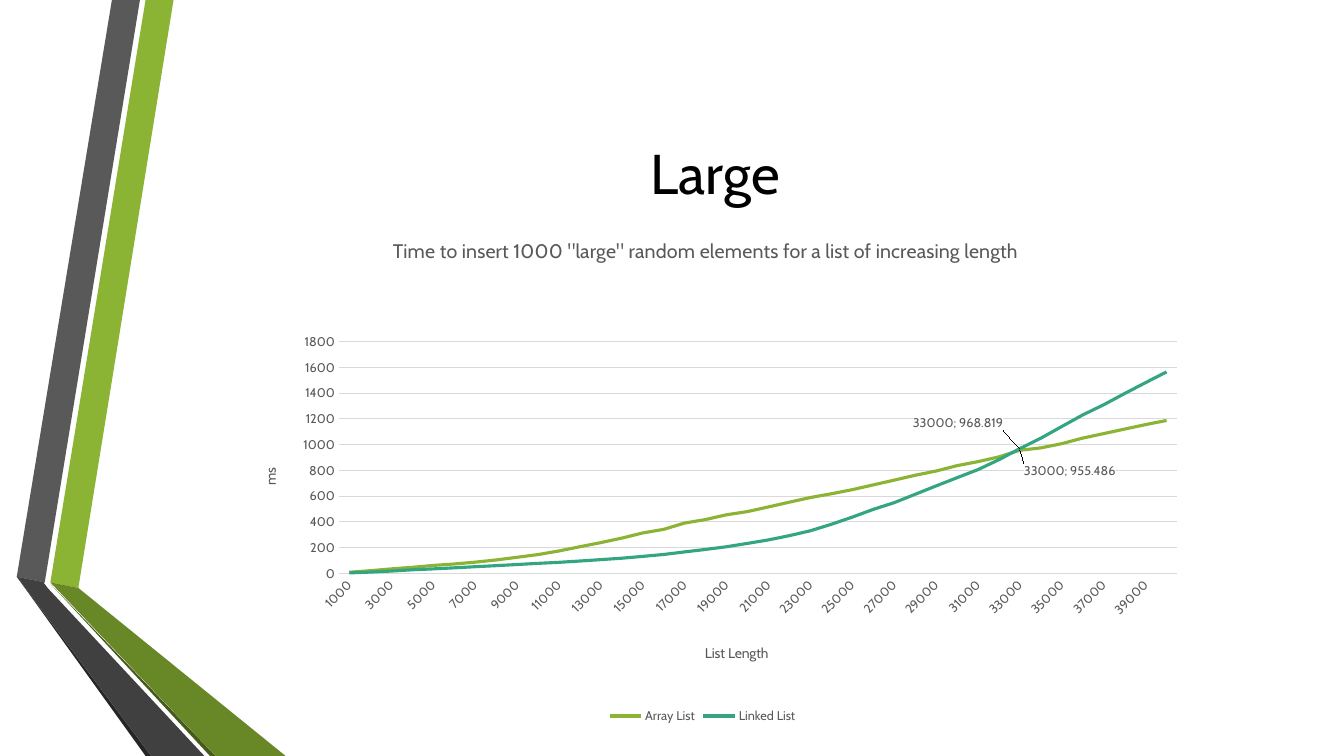
from dataclasses import dataclass

from pptx import Presentation
from pptx.chart.data import CategoryChartData
from pptx.dml.color import RGBColor
from pptx.enum.chart import XL_CHART_TYPE, XL_LEGEND_POSITION, XL_TICK_MARK
from pptx.enum.text import MSO_ANCHOR, PP_ALIGN
from pptx.oxml import parse_xml
from pptx.oxml.ns import nsdecls
from pptx.util import Pt


@dataclass(frozen=True)
class Theme:
    font: str = "Cabin"
    black: str = "000000"
    white: str = "FFFFFF"
    muted: str = "595959"
    grid: str = "D9D9D9"
    green: str = "8BB434"
    green_shade: str = "688727"
    green_edge: str = "465A1A"
    grey_shade: str = "404040"
    grey_edge: str = "262626"
    teal: str = "33A583"
    title_size: int = 40
    subtitle_size: int = 14
    axis_title_size: int = 10
    label_size: int = 9


THEME = Theme()
SLIDE_BOX = (0, 0, 960, 540)
TITLE_BOX = (116.5, 54, 789, 138)
CHART_BOX = (141, 152, 721.5, 368)

# Outlines of the folded ribbons, back to front
RIBBONS = [
    (THEME.green, [(36, 416), (55.5, 420), (124.5, 0), (104.5, 0)]),
    (THEME.muted, [(100, 0), (80, 0), (11.5, 412.5), (31.5, 415.5)]),
    (THEME.grey_edge, [(11.5, 412.5), (104.5, 540), (108.5, 540)]),
    (THEME.green_edge, [(36, 417), (150, 540), (154, 540)]),
    (THEME.green_shade, [(36, 416.5), (154, 540), (204, 540), (55.5, 420)]),
    (THEME.grey_shade, [(145.5, 540), (34.5, 420), (31, 416), (31.5, 415.5),
                        (11.5, 412.5), (108.5, 540)]),
]

# Milliseconds for list lengths 1000, 2000, ... 40000
ARRAY_LIST = [
    8, 20, 34, 46, 61, 72, 86, 103, 124, 145, 173, 206, 238, 273, 313, 341, 390, 417, 454, 479,
    515, 552, 588, 617, 649, 686, 723, 761, 794, 836, 867, 904, 955.486, 974, 1007, 1050, 1085,
    1120, 1155, 1187]
LINKED_LIST = [
    3, 9, 17, 27, 34, 42, 51, 59, 68, 77, 85, 95, 106, 117, 131, 146, 166, 185, 206, 232,
    259, 292, 330, 380, 436, 496, 548, 613, 678, 742, 805, 882, 968.819, 1049, 1140, 1230, 1309,
    1396, 1481, 1564]
CROSSING = 32  # index of list length 33000

# name, values, colour, shift of the crossing label
SERIES = [
    ("Array List", ARRAY_LIST, THEME.green, (0, 0.04)),
    ("Linked List", LINKED_LIST, THEME.teal, (-0.11, -0.05)),
]


def rgb(colour):
    return RGBColor.from_string(colour)


def format_font(font, size, colour=THEME.muted):
    font.name, font.size, font.bold = THEME.font, Pt(size), False
    font.color.rgb = rgb(colour)


def write_text(frame, text, size, colour=THEME.muted, align=PP_ALIGN.CENTER):
    frame.text = text
    paragraph = frame.paragraphs[0]
    paragraph.alignment = align
    format_font(paragraph.runs[0].font, size, colour)


def manual_layout(x, y, size=None):
    """Layout inside the chart, in fractions of its width and height."""
    target = '<c:layoutTarget val="inner"/>' if size else ""
    extent = f'<c:w val="{size[0]}"/><c:h val="{size[1]}"/>' if size else ""
    return parse_xml(
        f'<c:layout {nsdecls("c")}><c:manualLayout>{target}'
        '<c:xMode val="edge"/><c:yMode val="edge"/>'
        f'<c:x val="{x}"/><c:y val="{y}"/>{extent}</c:manualLayout></c:layout>')


def add_ribbons(slide, box):
    left, top = box[:2]
    for colour, outline in RIBBONS:
        points = [(left + x, top + y) for x, y in outline]
        builder = slide.shapes.build_freeform(*points[0], scale=Pt(1))
        builder.add_line_segments(points[1:], close=True)
        ribbon = builder.convert_to_shape()
        ribbon.shadow.inherit = False
        ribbon.fill.solid()
        ribbon.fill.fore_color.rgb = rgb(colour)
        ribbon.line.fill.background()


def place_title(slide, box):
    heading = slide.shapes.title
    heading.left, heading.top, heading.width, heading.height = map(Pt, box)
    heading.text_frame.vertical_anchor = MSO_ANCHOR.MIDDLE
    write_text(heading.text_frame, "Large", THEME.title_size, THEME.black)


def place_chart_title(owner_title, text, size, x, y):
    write_text(owner_title.text_frame, text, size)
    element = owner_title._element
    for layout in element.xpath("c:layout"):
        element.remove(layout)
    element.xpath("c:tx")[0].addnext(manual_layout(x, y))


def label_crossing(series, shift):
    """Label one point with category and value, moved off the line with a leader."""
    flags = "".join(f'<c:show{part} val="{{{key}}}"/>' for part, key in [
        ("LegendKey", "off"), ("Val", "on"), ("CatName", "on"),
        ("SerName", "off"), ("Percent", "off"), ("BubbleSize", "off")])
    labels = parse_xml(
        f'<c:dLbls {nsdecls("c", "a")}><c:dLbl><c:idx val="{CROSSING}"/>'
        f'<c:layout><c:manualLayout><c:x val="{shift[0]}"/><c:y val="{shift[1]}"/>'
        '</c:manualLayout></c:layout>'
        f'<c:spPr><a:solidFill><a:srgbClr val="{THEME.white}"/></a:solidFill></c:spPr>'
        f'<c:txPr><a:bodyPr wrap="none"/><a:p><a:pPr><a:defRPr sz="{THEME.label_size * 100}">'
        f'<a:solidFill><a:srgbClr val="{THEME.muted}"/></a:solidFill>'
        f'<a:latin typeface="{THEME.font}"/></a:defRPr></a:pPr></a:p></c:txPr>'
        f'<c:dLblPos val="r"/>{flags.format(on=1, off=0)}<c:separator>; </c:separator></c:dLbl>'
        f'{flags.format(on=0, off=0)}'
        '<c:extLst><c:ext uri="{CE6537A1-D6FC-4f65-9D91-7224C49458BB}" '
        'xmlns:c15="http://schemas.microsoft.com/office/drawing/2012/chart">'
        '<c15:showLeaderLines val="1"/></c:ext></c:extLst></c:dLbls>')
    series._element.xpath("c:cat")[0].addprevious(labels)


def format_axes(chart):
    lengths, times = chart.category_axis, chart.value_axis
    for axis in (lengths, times):
        axis.major_tick_mark = axis.minor_tick_mark = XL_TICK_MARK.NONE
        format_font(axis.tick_labels.font, THEME.label_size)
    lengths.format.line.color.rgb = rgb(THEME.grid)
    lengths.format.line.width = Pt(0.75)
    lengths._element.xpath("c:txPr/a:bodyPr")[0].set("rot", "-2700000")
    lengths._element.xpath("c:noMultiLvlLbl")[0].addprevious(
        parse_xml(f'<c:tickLblSkip {nsdecls("c")} val="2"/>'))

    times.minimum_scale, times.maximum_scale, times.major_unit = 0, 1800, 200
    times.format.line.fill.background()
    times.major_gridlines.format.line.color.rgb = rgb(THEME.grid)
    times.major_gridlines.format.line.width = Pt(0.75)

    place_chart_title(lengths.axis_title, "List Length", THEME.axis_title_size, 0.5, 0.83)
    place_chart_title(times.axis_title, "ms", THEME.axis_title_size, 0.06, 0.49)
    times.axis_title._element.xpath("c:tx/c:rich/a:bodyPr")[0].set("rot", "-5400000")


def add_timing_chart(slide, box):
    timings = CategoryChartData()
    timings.categories = [str(1000 * step) for step in range(1, len(ARRAY_LIST) + 1)]
    for name, values, _, _ in SERIES:
        timings.add_series(name, values)
    chart = slide.shapes.add_chart(XL_CHART_TYPE.LINE, *map(Pt, box), timings).chart
    format_font(chart.font, THEME.axis_title_size, THEME.black)

    # Lines
    chart.plots[0].vary_by_categories = False
    for series, (_, _, colour, shift) in zip(chart.plots[0].series, SERIES):
        series.smooth = False
        series.format.line.color.rgb = rgb(colour)
        series.format.line.width = Pt(2.25)
        label_crossing(series, shift)

    # Title, axes and plot area
    chart.has_title = True
    place_chart_title(
        chart.chart_title, 'Time to insert 1000 "large" random elements for a list of increasing length',
        THEME.subtitle_size, 0.19, 0.04)
    format_axes(chart)
    plot_area = chart._chartSpace.xpath("c:chart/c:plotArea")[0]
    for layout in plot_area.xpath("c:layout"):
        plot_area.remove(layout)
    plot_area.insert(0, manual_layout(0.14, 0.25, (0.83, 0.45)))

    # Legend
    chart.has_legend = True
    chart.legend.position = XL_LEGEND_POSITION.BOTTOM
    chart.legend.include_in_layout = False
    format_font(chart.legend.font, THEME.label_size)


def main():
    deck = Presentation()
    deck.slide_width, deck.slide_height = map(Pt, SLIDE_BOX[2:])
    slide = deck.slides.add_slide(deck.slide_layouts[5])
    add_ribbons(slide, SLIDE_BOX)
    place_title(slide, TITLE_BOX)
    add_timing_chart(slide, CHART_BOX)
    deck.save("out.pptx")


if __name__ == "__main__":
    main()
